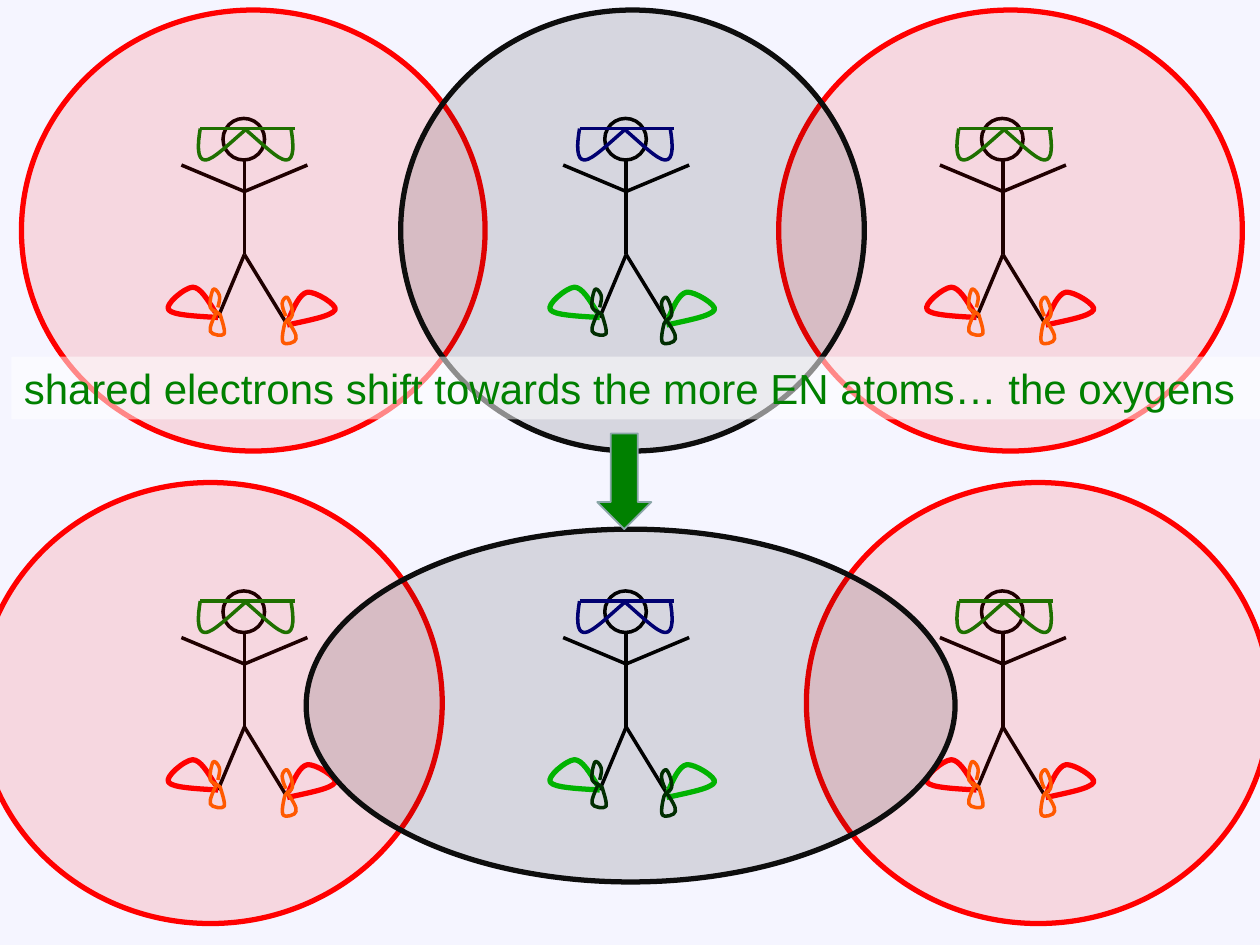
from lxml import etree
from pptx import Presentation
from pptx.dml.color import RGBColor
from pptx.enum.shapes import MSO_CONNECTOR, MSO_SHAPE
from pptx.enum.text import MSO_AUTO_SIZE
from pptx.oxml.ns import qn
from pptx.util import Inches, Pt

OVAL = MSO_SHAPE.OVAL
DOWN_ARROW = MSO_SHAPE.DOWN_ARROW
STRAIGHT = MSO_CONNECTOR.STRAIGHT
FIT_TEXT = MSO_AUTO_SIZE.SHAPE_TO_FIT_TEXT

BLACK, RED, GREEN, CARBON = "000000", "FF0000", "008000", "0D0D0D"
ROW_STEP = 3.75

LIMBS = [
    ((0, 1.27), (0, 2.02)),
    ((0, 2.02), (0.33, 2.56)),
    ((0, 2.02), (-0.21, 2.52)),
    ((0, 1.52), (0.5, 1.31)),
    ((0, 1.52), (-0.5, 1.31)),
]
RIGHT_FIN = [
    (0.33, 2.54), (0.37, 2.44), (0.42, 2.33), (0.48, 2.32),
    (0.54, 2.31), (0.72, 2.42), (0.7, 2.46),
    (0.67, 2.51), (0.5, 2.54), (0.32, 2.58),
]
RIGHT_STRAP = [
    (0.31, 2.51), (0.29, 2.47), (0.28, 2.43), (0.28, 2.41),
    (0.28, 2.38), (0.31, 2.35), (0.32, 2.36),
    (0.34, 2.38), (0.37, 2.46), (0.36, 2.5),
    (0.36, 2.53), (0.31, 2.53), (0.3, 2.57),
    (0.29, 2.61), (0.27, 2.7), (0.29, 2.72),
    (0.3, 2.74), (0.39, 2.72), (0.39, 2.69),
    (0.4, 2.66), (0.36, 2.6), (0.32, 2.54),
]
LEFT_FIN = [
    (-0.23, 2.48), (-0.29, 2.38), (-0.35, 2.28), (-0.41, 2.28),
    (-0.47, 2.28), (-0.64, 2.42), (-0.6, 2.46),
    (-0.57, 2.5), (-0.39, 2.51), (-0.21, 2.52),
]
LEFT_STRAP = [
    (-0.21, 2.44), (-0.2, 2.4), (-0.19, 2.36), (-0.2, 2.34),
    (-0.21, 2.31), (-0.24, 2.28), (-0.25, 2.3),
    (-0.26, 2.32), (-0.28, 2.4), (-0.27, 2.44),
    (-0.26, 2.47), (-0.21, 2.47), (-0.19, 2.5),
    (-0.18, 2.54), (-0.15, 2.62), (-0.16, 2.65),
    (-0.17, 2.67), (-0.26, 2.66), (-0.27, 2.63),
    (-0.28, 2.6), (-0.25, 2.54), (-0.22, 2.47),
]
LEFT_LENS = [
    (-0.37, 1.02), (-0.39, 1.14), (-0.4, 1.27), (-0.33, 1.27),
    (-0.27, 1.27), (-0.14, 1.14), (0, 1.02),
]
RIGHT_LENS = [(-0.02 - x, y) for x, y in LEFT_LENS]


def color(value):
    return RGBColor.from_string(value)


def moved(points, right, down):
    return [(x + right, y + down) for x, y in points]


class Drawing:
    font = "Arial"

    def __init__(self, page, background):
        self.page = page
        self.shapes = page.shapes
        page.background.fill.solid()
        page.background.fill.fore_color.rgb = color(background)

    def outline(self, item, stroke, weight):
        item.line.color.rgb = color(stroke)
        item.line.width = Pt(weight)

    def paint(self, item, fill, opacity=100):
        item.fill.solid()
        item.fill.fore_color.rgb = color(fill)
        if opacity < 100:
            tint = item.fill._xPr.find(".//" + qn("a:srgbClr"))
            etree.SubElement(tint, qn("a:alpha"), val=str(opacity * 1000))

    def shape(self, kind, area, stroke, weight, fill=None, opacity=100):
        item = self.shapes.add_shape(kind, *map(Inches, area))
        item.shadow.inherit = False
        if fill:
            self.paint(item, fill, opacity)
        else:
            item.fill.background()
        self.outline(item, stroke, weight)

    def line(self, start, end, stroke, weight=2):
        item = self.shapes.add_connector(STRAIGHT, *map(Inches, start + end))
        self.outline(item, stroke, weight)
        etree.SubElement(item._element.spPr, qn("a:effectLst"))

    def curve(self, points, stroke, weight=2):
        places = [(Inches(x), Inches(y)) for x, y in points]
        builder = self.shapes.build_freeform(*places[0])
        builder.add_line_segments(places[1:], close=False)
        item = builder.convert_to_shape()
        item.shadow.inherit = False
        item.fill.background()
        self.outline(item, stroke, weight)
        outline = item._element.find(".//" + qn("a:path"))
        segments = outline.findall(qn("a:lnTo"))
        for first in range(0, len(segments), 3):
            bend = etree.SubElement(outline, qn("a:cubicBezTo"))
            for segment in segments[first:first + 3]:
                bend.append(segment[0])
                outline.remove(segment)

    def text(self, area, words, size, ink, fill, opacity):
        box = self.shapes.add_textbox(*map(Inches, area))
        self.paint(box, fill, opacity)
        box.text_frame.word_wrap = False
        box.text_frame.auto_size = FIT_TEXT
        para = box.text_frame.paragraphs[0]
        para.text = words
        para.font.name = self.font
        para.font.size = Pt(size)
        para.font.color.rgb = color(ink)

    def diver(self, spine, drop, goggles, fins, straps, shift):
        self.shapes = self.page.shapes.add_group_shape().shapes
        self.shape(OVAL, (spine - 0.17, drop + 0.94, 0.33, 0.33), BLACK, 2)
        for limb in LIMBS:
            self.line(*moved(limb, spine, drop), BLACK)
        self.curve(moved(RIGHT_FIN, spine + shift, drop), fins, 3)
        self.curve(moved(RIGHT_STRAP, spine + shift, drop), straps)
        self.curve(moved(LEFT_FIN, spine, drop), fins, 3)
        self.curve(moved(LEFT_STRAP, spine, drop), straps)
        bar = moved([(-0.37, 1.02), (0.38, 1.02)], spine + shift, drop)
        self.line(*bar, goggles)
        for lens in (LEFT_LENS, RIGHT_LENS):
            self.curve(moved(lens, spine + shift, drop), goggles)
        self.shapes = self.page.shapes

    def cloud(self, area, tone, opacity):
        self.shape(OVAL, area, tone, 3, tone, opacity)


def main():
    deck = Presentation()
    deck.slide_width, deck.slide_height = Inches(10), Inches(7.5)
    drawing = Drawing(deck.slides.add_slide(deck.slide_layouts[6]), "F5F5FF")

    rows = [
        ((6.18, 0.17), (3.18, 0.08, 3.68, 3.5)),
        ((6.4, -0.17), (2.43, 4.2, 5.15, 2.8)),
    ]
    for row, (oxygen_lefts, carbon_area) in enumerate(rows):
        drop = row * ROW_STEP
        drawing.diver(4.97, drop, "000080", "00CC00", "003300", 0)
        for spine in (7.96, 1.94):
            drawing.diver(spine, drop, GREEN, RED, "FF6600", 0.02)
        for left in oxygen_lefts:
            drawing.cloud((left, drop + 0.08, 3.68, 3.5), RED, 12)
        drawing.cloud(carbon_area, CARBON, 13)

    drawing.text(
        (0.09, 2.83, 9.91, 0.5),
        "shared electrons shift towards the more EN atoms… the oxygens",
        24, GREEN, "FFFFFF", 53,
    )
    drawing.shape(DOWN_ARROW, (4.74, 3.44, 0.43, 0.76), "8AA6A8", 1, GREEN)
    deck.save("out.pptx")


if __name__ == "__main__":
    main()
